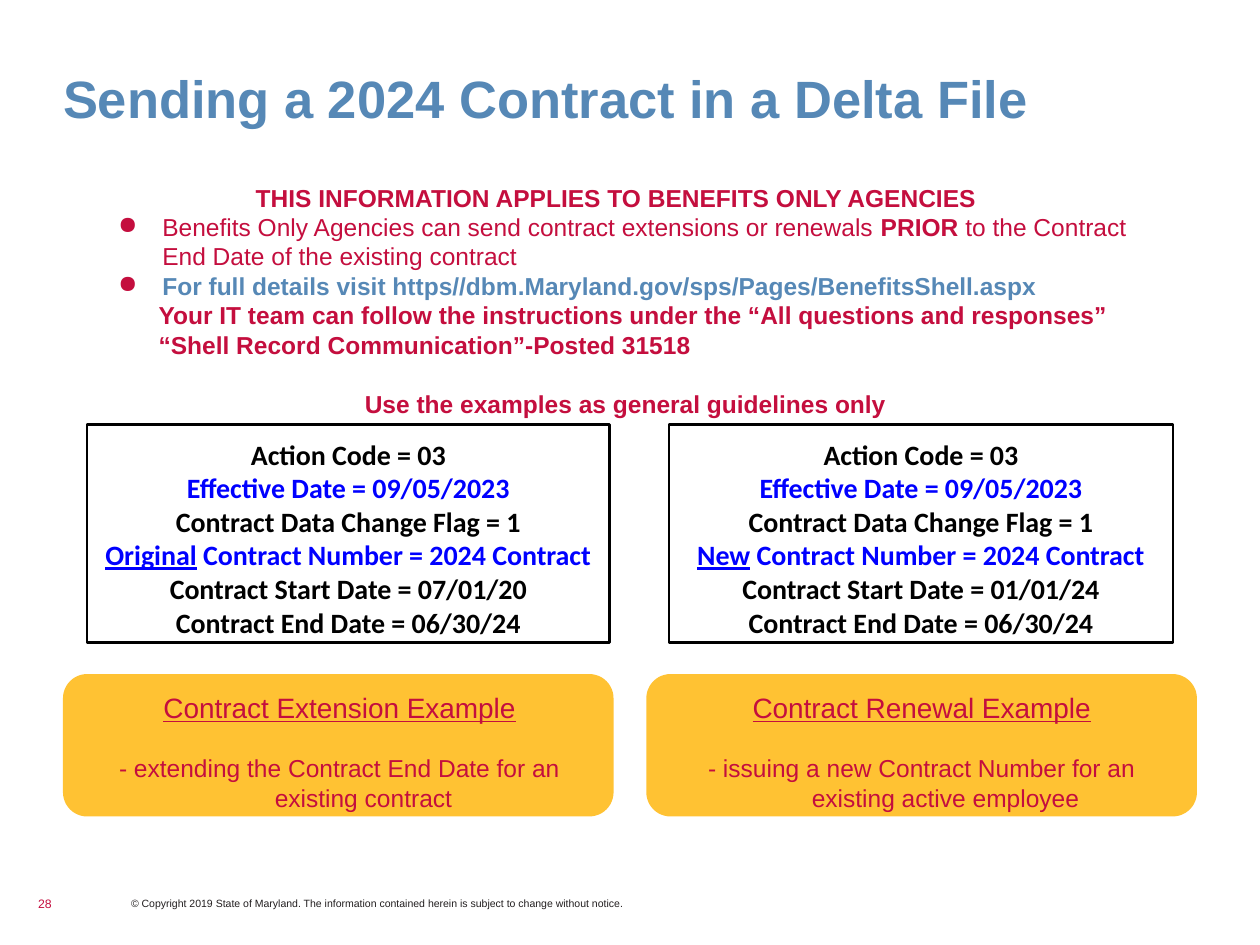
from lxml import etree
from pptx import Presentation
from pptx import util as u
from pptx.dml.color import RGBColor
from pptx.enum import shapes, text
from pptx.oxml.ns import qn

RED, STEEL, GOLD = "C40E3E", "5688B6", "FFC233"
BLACK, BLUE, INK = "000000", "0000FF", "231F20"
CENTER, RIGHT = text.PP_ALIGN.CENTER, text.PP_ALIGN.RIGHT


def rgb(value):
    return RGBColor.from_string(value)


class Deck:
    """Holds the style and the current slide; places are percent of the slide."""
    leading = 1.2

    def __init__(self):
        self.prs = Presentation()
        self.prs.slide_width, self.prs.slide_height = u.Inches(10), u.Inches(7.5)
        self.slide = self.prs.slides.add_slide(self.prs.slide_layouts[5])

    def place(self, x, y, w, h):
        sw, sh = self.prs.slide_width, self.prs.slide_height
        return [round(v * full / 100) for v, full in ((x, sw), (y, sh), (w, sw), (h, sh))]

    def frame(self, sp, insets=(0, 0), anchor=text.MSO_ANCHOR.TOP):
        tf = sp.text_frame
        tf.word_wrap, tf.auto_size = True, text.MSO_AUTO_SIZE.NONE
        tf.vertical_anchor = anchor
        tf.margin_left = tf.margin_right = u.Inches(insets[0])
        tf.margin_top = tf.margin_bottom = u.Inches(insets[1])
        return tf

    def style(self, r, size, color, bold=False, underline=False, font="Arial"):
        f = r.font
        f.name, f.size, f.bold, f.underline = font, u.Pt(size), bold, underline
        f.color.rgb = rgb(color)

    def title(self, at, words):
        sp = self.slide.shapes.title
        sp.left, sp.top, sp.width, sp.height = self.place(*at)
        tf = self.frame(sp)
        tf.text = words
        p = tf.paragraphs[0]
        p.alignment, p.line_spacing = text.PP_ALIGN.LEFT, 0.85
        self.style(p.runs[0], 30, STEEL, bold=True)

    def shape(self, kind, at, fill=None, line=None):
        sp = self.slide.shapes.add_shape(kind, *self.place(*at))
        sp.shadow.inherit = False
        if fill:
            sp.fill.solid()
            sp.fill.fore_color.rgb = rgb(fill)
        else:
            sp.fill.background()
        if line:
            sp.line.color.rgb = rgb(line)
            sp.line.width = u.Pt(1.5)
        else:
            sp.line.fill.background()
        return sp

    def box(self, at, insets=(0, 0), anchor=text.MSO_ANCHOR.TOP):
        sp = self.slide.shapes.add_textbox(*self.place(*at))
        return self.frame(sp, insets, anchor)

    def para(self, tf, runs, size, align=None, indent=(0, 0), bullet=None, gap=0, **look):
        """Adds one paragraph; runs are (text, changes to the look) pairs."""
        p = tf.paragraphs[0]
        if p.runs:
            p = tf.add_paragraph()
        pPr = p._p.get_or_add_pPr()
        pPr.set("marL", str(u.Inches(indent[0])))
        pPr.set("indent", str(u.Inches(indent[1])))
        if bullet:
            clr = etree.SubElement(pPr, qn("a:buClr"))
            etree.SubElement(clr, qn("a:srgbClr"), val=bullet)
            etree.SubElement(pPr, qn("a:buChar"), char="●")
        p.alignment = align
        p.line_spacing = u.Pt(size * self.leading)
        if gap:
            p.space_before = u.Pt(gap)
        for words, change in runs:
            r = p.add_run()
            r.text = words
            self.style(r, size, **{**look, **change})


def main():
    deck = Deck()
    blank_line = 14 * deck.leading

    # Gold panels
    for x in (5, 51.3):
        sp = deck.shape(shapes.MSO_SHAPE.ROUNDED_RECTANGLE, (x, 71.33, 43.7, 15.07), fill=GOLD)
        sp.adjustments[0] = 0.17

    deck.title((5, 8, 90, 5.73), "Sending a 2024 Contract in a Delta File")

    # Panel captions
    captions = [
        (6.2, "Contract Extension Example",
         "- extending the Contract End Date for an existing contract"),
        (52.4, "Contract Renewal Example",
         "- issuing a new Contract Number for an existing active employee"),
    ]
    for x, heading, detail in captions:
        tf = deck.box((x, 72.4, 41.5, 13.07), (0.1, 0.05))
        hanging = dict(align=CENTER, indent=(0.38, -0.38), color=RED)
        deck.para(tf, [(heading, {"underline": True})], 16, **hanging)
        deck.para(tf, [(detail, {})], 14, gap=blank_line, **hanging)

    # Footer
    middle = text.MSO_ANCHOR.MIDDLE
    tf = deck.box((2.9, 94.8, 1.2, 1.6), anchor=middle)
    deck.para(tf, [("28", {})], 7, RIGHT, color=RED)
    tf = deck.box((10.4, 94.93, 39.6, 1.33), anchor=middle)
    deck.para(tf, [("© Copyright 2019 State of Maryland. The information contained herein "
                    "is subject to change without notice.", {})], 6, color=INK)

    # Introduction
    tf = deck.box((6.9, 18, 84, 26.93), (0.1, 0.1))
    strong = dict(size=14, color=RED, bold=True)
    item = dict(strong, indent=(0.5, -0.35), bullet=RED)
    plain = {"bold": False}
    deck.para(tf, [("THIS INFORMATION APPLIES TO BENEFITS ONLY AGENCIES", {})],
              align=CENTER, **strong)
    deck.para(tf, [("Benefits Only Agencies can send contract extensions or renewals ", plain),
                   ("PRIOR", {}),
                   (" to the Contract End Date of the existing contract", plain)], **item)
    deck.para(tf, [("For full details visit https//dbm.Maryland.gov/sps/Pages/BenefitsShell.aspx",
                    {"color": STEEL})], **item)
    for words in ("Your IT team can follow the instructions under the “All questions and responses”",
                  "“Shell Record Communication”-Posted 31518"):
        deck.para(tf, [(words, {})], indent=(0.47, 0), **strong)
    deck.para(tf, [("Use the examples as general guidelines only", {})],
              align=CENTER, indent=(0.15, 0), gap=blank_line, **strong)

    # Example records
    records = [(6.9, 41.5, "Original", "07/01/20"), (53.1, 40, "New", "01/01/24")]
    for x, w, number_kind, start in records:
        sp = deck.shape(shapes.MSO_SHAPE.RECTANGLE, (x, 44.93, w, 23.07), line=BLACK)
        tf = deck.frame(sp, (0.1, 0.1))
        blue = {"color": BLUE}
        lines = [
            [("Action Code = 03", {})],
            [("Effective Date = 09/05/2023", blue)],
            [("Contract Data Change Flag = 1", {})],
            [(number_kind, {**blue, "underline": True}),
             (" Contract Number = 2024 Contract", blue)],
            [(f"Contract Start Date = {start}", {})],
            [("Contract End Date = 06/30/24", {})],
        ]
        for runs in lines:
            deck.para(tf, runs, 16, CENTER, (0.07, -0.07),
                      color=BLACK, bold=True, font="Calibri")

    deck.prs.save("out.pptx")


if __name__ == "__main__":
    main()
